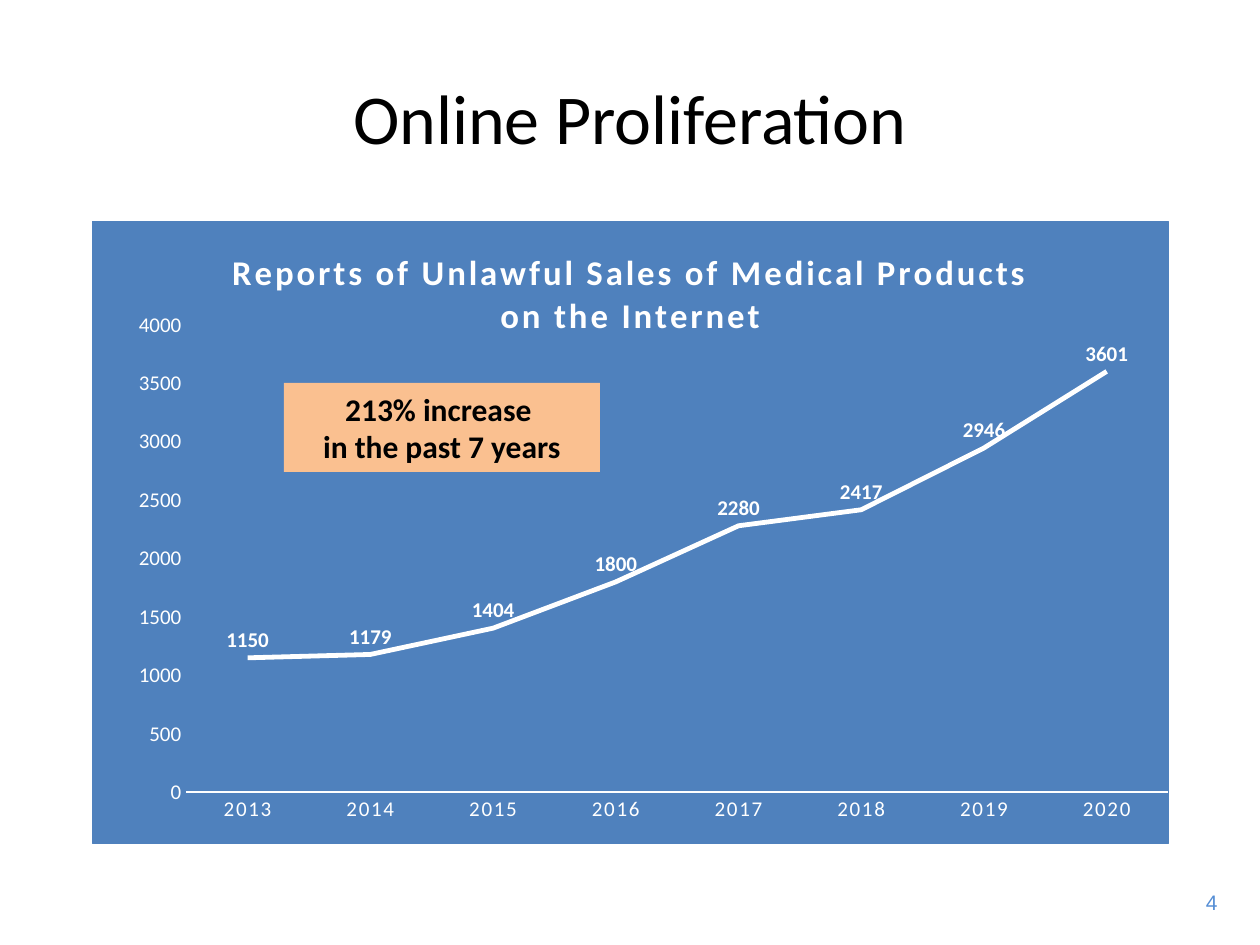
from lxml import etree
from pptx import Presentation
from pptx import util as u
from pptx.chart.data import CategoryChartData
from pptx.dml.color import RGBColor
from pptx.enum import chart as charts, shapes, text
from pptx.oxml import parse_xml
from pptx.oxml.ns import nsdecls, qn

SCALE = 914400 / 126
WHITE, BLACK, BLUE = "FFFFFF", "000000", "4F81BD"


def px(*lengths):
    return [u.Emu(round(length * SCALE)) for length in lengths]


def style(font, size, color, bold=False, name="Calibri"):
    font.size = u.Pt(size)
    font.bold = bold
    font.name = name
    font.color.rgb = RGBColor.from_string(color)


presentation = Presentation()
presentation.slide_width, presentation.slide_height = px(1260, 945)
slide = presentation.slides.add_slide(presentation.slide_layouts[6])

chart_title = "Reports of Unlawful Sales of Medical Products on the Internet"
chart_data = CategoryChartData()
chart_data.categories = [str(year) for year in range(2013, 2021)]
chart_data.add_series(chart_title, [1150, 1179, 1404, 1800, 2280, 2417, 2946, 3601])
chart = slide.shapes.add_chart(
    charts.XL_CHART_TYPE.LINE, *px(92, 221, 1077, 623), chart_data
).chart
style(chart.font, 10, BLACK)
chart.has_legend = False
chart.has_title = True
title_frame = chart.chart_title.text_frame
title_frame.text = chart_title
title_run = title_frame.paragraphs[0].runs[0]
style(title_run.font, 19.9, WHITE, True)
title_run.font._element.set("spc", "150")

category_axis, value_axis = chart.category_axis, chart.value_axis
for axis in (category_axis, value_axis):
    axis.has_major_gridlines = False
    axis.major_tick_mark = axis.minor_tick_mark = charts.XL_TICK_MARK.NONE
    style(axis.tick_labels.font, 12, WHITE)
category_axis.tick_labels.font._element.set("spc", "100")
category_axis.format.line.color.rgb = RGBColor.from_string(WHITE)
category_axis.format.line.width = u.Pt(1)
value_axis.format.line.fill.background()
value_axis.minimum_scale, value_axis.maximum_scale = 0, 4000
value_axis.major_unit = 500

plot = chart.plots[0]
plot.vary_by_categories = False
series = plot.series[0]
series.smooth = False
series.marker.style = charts.XL_MARKER_STYLE.NONE
series.format.line.color.rgb = RGBColor.from_string(WHITE)
series.format.line.width = u.Pt(2.75)
labels = series.data_labels
labels.show_value = True
labels.position = charts.XL_LABEL_POSITION.ABOVE
style(labels.font, 12, WHITE, True)

chart_part = chart._chartSpace.find(qn("c:chart"))
chart_part.addnext(parse_xml(
    f'<c:spPr {nsdecls("c", "a")}><a:solidFill><a:srgbClr val="{BLUE}"/></a:solidFill>'
    f'<a:ln w="9525"><a:solidFill><a:srgbClr val="{BLUE}"/></a:solidFill></a:ln></c:spPr>'
))
plot_area = chart_part.find(qn("c:plotArea"))
for layout in plot_area.findall(qn("c:layout")):
    plot_area.remove(layout)
layout = parse_xml(f'<c:layout {nsdecls("c")}><c:manualLayout/></c:layout>')
settings = {"layoutTarget": "inner", "xMode": "edge", "yMode": "edge",
            "x": 0.087, "y": 0.166, "w": 0.913, "h": 0.752}
for name, value in settings.items():
    etree.SubElement(layout[0], qn(f"c:{name}")).set("val", str(value))
plot_area.insert(0, layout)

callout = slide.shapes.add_shape(shapes.MSO_SHAPE.RECTANGLE, *px(284, 383, 316, 89))
callout.shadow.inherit = False
callout.fill.solid()
callout.fill.fore_color.rgb = RGBColor.from_string("FAC090")
callout.line.fill.background()

title = slide.shapes.add_textbox(*px(63, 38, 1134, 157))
page_number = slide.shapes.add_textbox(*px(1178, 883, 52, 38))
center, right = text.PP_ALIGN.CENTER, text.PP_ALIGN.RIGHT
for shape, words, alignment, size, color, bold, font_name in (
    (title, "Online Proliferation", center, 40, BLACK, False, "Calibri"),
    (callout, "213% increase \nin the past 7 years", center, 18, BLACK, True, "Calibri"),
    (page_number, "4", right, 12, "558ED5", False, "Arial"),
):
    frame = shape.text_frame
    frame.text = words
    frame.word_wrap = shape is not page_number
    frame.vertical_anchor = text.MSO_ANCHOR.MIDDLE
    for paragraph in frame.paragraphs:
        paragraph.alignment = alignment
        style(paragraph.runs[0].font, size, color, bold, font_name)

presentation.save("out.pptx")
